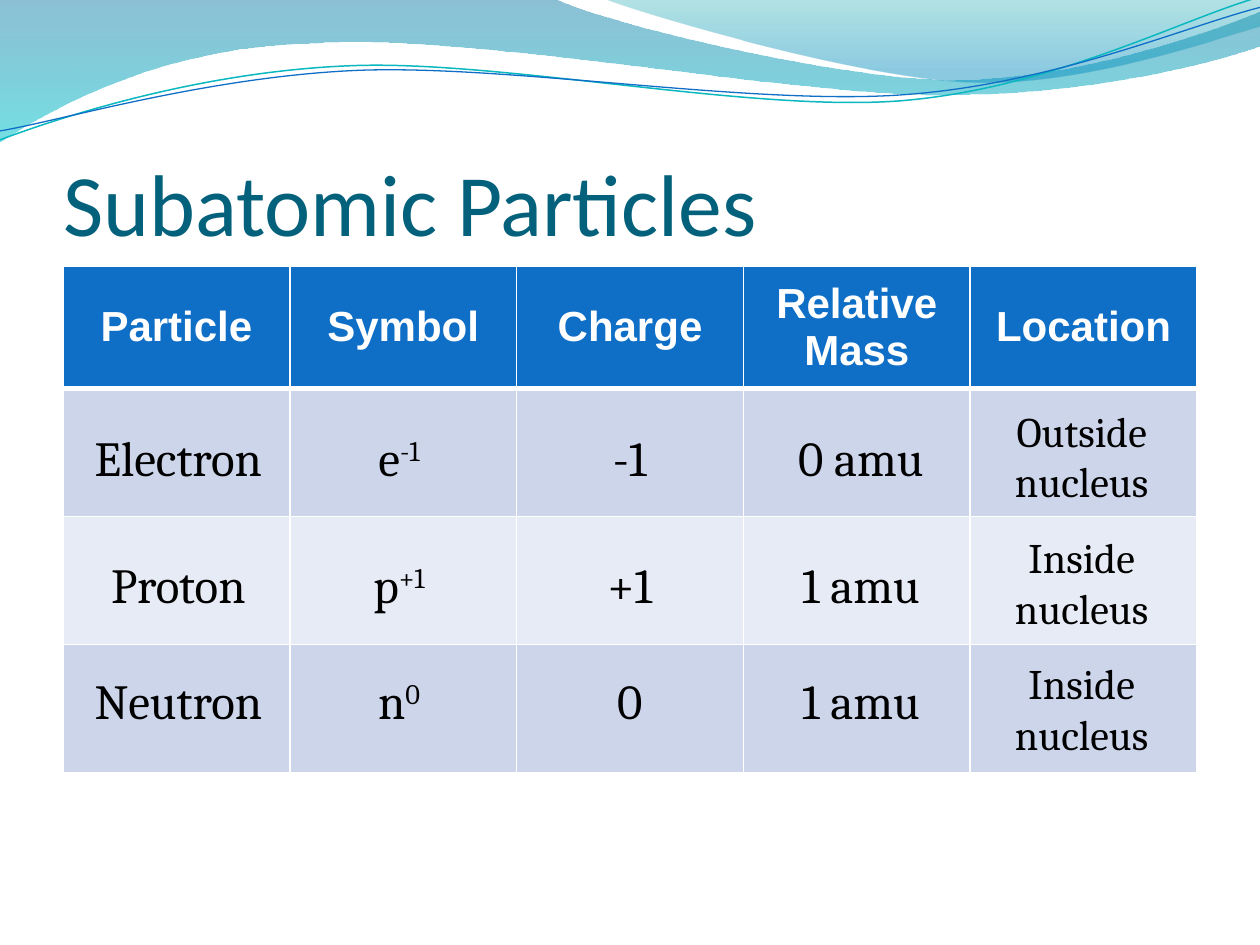
from pptx import Presentation
from pptx.dml.color import RGBColor
from pptx.enum.text import MSO_ANCHOR, MSO_AUTO_SIZE, PP_ALIGN
from pptx.oxml import parse_xml
from pptx.oxml.ns import nsdecls, qn
from pptx.util import Cm, Pt
from lxml.etree import SubElement

rgb = RGBColor.from_string

# Outlines in cm: two numbers are a straight segment, six a cubic curve.
WAVES = [
    ([(0, 0), (11.18, -0.03), (12.09, 0.43, 16.87, 1.6, 19.25, 1.6),
      (21.67, 1.6, 24.33, 0.66, 25.4, 0.23), (25.43, 0.91),
      (24.97, 1.12, 22.1, 1.93, 18.95, 1.91), (15.8, 1.91, 9.7, 0.71, 6.53, 0.86),
      (3.28, 0.91, 1.17, 2.11, -0.03, 2.87), (0, 0)],
     [(0, "0074A1", 45), (1, "00C6CF", 55)]),
    ([(12.17, -0.03), (12.93, 0.28, 17.32, 1.57, 19.53, 1.65),
      (21.74, 1.75, 24.41, 0.81, 25.4, 0.53), (25.4, 0), (12.17, -0.03)],
     [(0, "00A1A9", 30), (0.8, "008BBF", 45)]),
]
CURVES = [
    ([(-0.05, 2.22), (1.19, 1.82, 4.02, 1.04, 7.05, 1.06),
      (10.05, 1.07, 15.02, 2.37, 18.08, 2.29), (21.14, 2.2, 23.87, 0.91, 25.41, 0.55)],
     "0AB8BF", 0.85),
    ([(-0.04, 2.04), (1.16, 1.9, 4.18, 1.15, 7.2, 1.16),
      (10.25, 1.18, 15.13, 2.25, 18.18, 2.17), (21.21, 2.1, 23.93, 1.06, 25.45, 0.75)],
     "0F6FC6", 0.75),
]
HEADERS = ["Particle", "Symbol", "Charge", "Relative Mass", "Location"]
# A "^" parts the base from its superscript.
PARTICLES = [
    ["Electron", "e^-1", "-1", "0 amu", "Outside nucleus"],
    ["Proton", "p^+1", "+1", "1 amu", "Inside nucleus"],
    ["Neutron", "n^0", "0", "1 amu", "Inside nucleus"],
]
BANDS = ["0F6FC6", "CCD5EA", "E7EBF5", "CCD5EA"]


def add_outline(shapes, segments, close):
    """Draw the segments as a freeform, merging each curve's three points into a cubic."""
    points = [(Cm(x), Cm(y)) for seg in segments for x, y in zip(seg[::2], seg[1::2])]
    builder = shapes.build_freeform(*points[0])
    builder.add_line_segments(points[1:], close=close)
    sp = builder.convert_to_shape()
    sp.shadow.inherit = False
    lines = iter(list(sp._element.iter(qn("a:lnTo"))))
    for seg in segments[1:]:
        first = next(lines)
        if len(seg) == 6:
            first.tag = qn("a:cubicBezTo")
            for _ in range(2):
                extra = next(lines)
                extra.getparent().remove(extra)
                first.append(extra[0])
    return sp


prs = Presentation()
prs.slide_width, prs.slide_height = Cm(25.4), Cm(19.05)
s = prs.slides.add_slide(prs.slide_layouts[5])

# Waves along the top
for segments, stops in WAVES:
    sp = add_outline(s.shapes, segments, close=True)
    sp.line.fill.background()
    sp.fill.gradient()
    sp.fill.gradient_angle = 270
    for stop, (position, color, _) in zip(sp.fill.gradient_stops, stops):
        stop.position = position
        stop.color.rgb = rgb(color)
    for clr, (_, _, opacity) in zip(sp._element.spPr.iter(qn("a:srgbClr")), stops):
        SubElement(clr, qn("a:alpha")).set("val", str(opacity * 1000))

for segments, color, width in CURVES:
    sp = add_outline(s.shapes, segments, close=False)
    sp.rotation = 357.3
    sp.fill.background()
    sp.line.color.rgb = rgb(color)
    sp.line.width = Pt(width)

# Title
title = s.shapes.title
title.left, title.top, title.width, title.height = Cm(1.27), Cm(1.95), Cm(22.86), Cm(3.17)
tf = title.text_frame
tf.text = "Subatomic Particles"
tf.auto_size = MSO_AUTO_SIZE.NONE
tf.vertical_anchor = MSO_ANCHOR.BOTTOM
tf.margin_left = tf.margin_right = tf.margin_bottom = 0
p = tf.paragraphs[0]
p.alignment = PP_ALIGN.LEFT
p.font.name, p.font.size = "Calibri", Pt(50)
p.font.color.rgb = rgb("04617B")

# Table grid; its default style draws the thin white borders
table = s.shapes.add_table(4, 5, Cm(1.27), Cm(5.37), Cm(22.86), Cm(10.2)).table
for row, height, color in zip(table.rows, [2.46, 2.58, 2.58, 2.58], BANDS):
    row.height = Cm(height)
    for cell in row.cells:
        cell.fill.solid()
        cell.fill.fore_color.rgb = rgb(color)
for cell, header in zip(table.rows[0].cells, HEADERS):
    cell.text = header
    cell.vertical_anchor = MSO_ANCHOR.MIDDLE
    p = cell.text_frame.paragraphs[0]
    p.alignment = PP_ALIGN.CENTER
    p.font.name, p.font.size, p.font.bold = "Arial", Pt(24), True
    p.font.color.rgb = rgb("FFFFFF")
    cell._tc.get_or_add_tcPr().insert(0, parse_xml(
        f'<a:lnB {nsdecls("a")} w="{Pt(3)}"><a:solidFill><a:srgbClr val="FFFFFF"/>'
        '</a:solidFill></a:lnB>'))

# Answers laid over the grid
lefts = [1.48, 5.93, 10.58, 15.24, 19.69]
for particle, top, location_top in zip(PARTICLES, [8.49, 11.05, 13.39], [8.05, 10.6, 13.14]):
    for header, text, left in zip(HEADERS, particle, lefts):
        is_location = header == "Location"
        box = s.shapes.add_textbox(Cm(left), Cm(location_top if is_location else top),
                                   Cm(4.23), Cm(2.31 if is_location else 1.45))
        tf = box.text_frame
        tf.word_wrap = True
        tf.auto_size = MSO_AUTO_SIZE.SHAPE_TO_FIT_TEXT
        p = tf.paragraphs[0]
        p.alignment = PP_ALIGN.CENTER
        p.font.name, p.font.size = "Cambria", Pt(24 if is_location else 28)
        p.font.color.rgb = rgb("000000")
        base, _, superscript = text.partition("^")
        p.add_run().text = base
        if superscript:
            r = p.add_run()
            r.text = superscript
            r._r.get_or_add_rPr().set("baseline", "30000")

prs.save("out.pptx")
